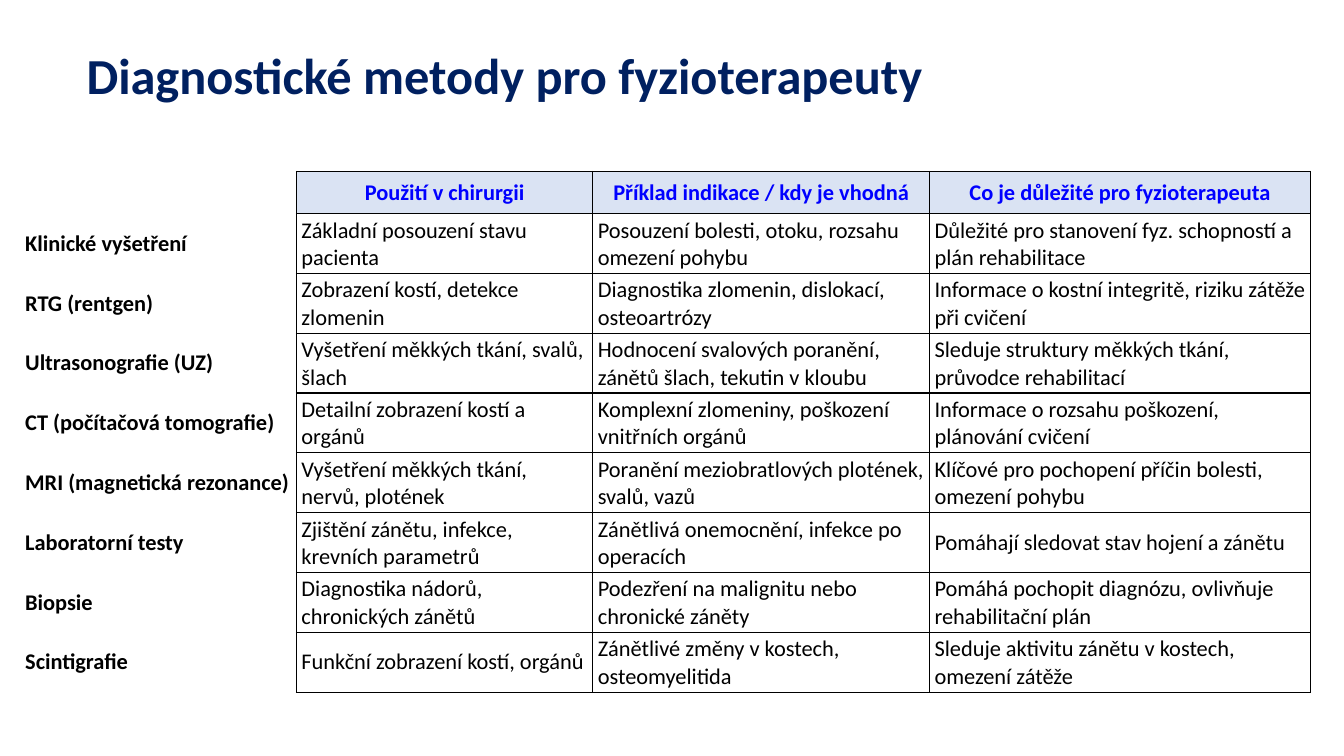
import pptx
import pptx.dml.color
import pptx.enum.text
import pptx.oxml
import pptx.oxml.ns
import pptx.util
from lxml import etree

TITLE = "Diagnostické metody pro fyzioterapeuty"
HEADINGS = ["", "Použití v chirurgii", "Příklad indikace / kdy je vhodná",
            "Co je důležité pro fyzioterapeuta"]
METHODS = [
    ("Klinické vyšetření", "Základní posouzení stavu pacienta",
     "Posouzení bolesti, otoku, rozsahu omezení pohybu",
     "Důležité pro stanovení fyz. schopností a plán rehabilitace"),
    ("RTG (rentgen)", "Zobrazení kostí, detekce zlomenin",
     "Diagnostika zlomenin, dislokací, osteoartrózy",
     "Informace o kostní integritě, riziku zátěže při cvičení"),
    ("Ultrasonografie (UZ)", "Vyšetření měkkých tkání, svalů, šlach",
     "Hodnocení svalových poranění, zánětů šlach, tekutin v kloubu",
     "Sleduje struktury měkkých tkání, průvodce rehabilitací"),
    ("CT (počítačová tomografie)", "Detailní zobrazení kostí a orgánů",
     "Komplexní zlomeniny, poškození vnitřních orgánů",
     "Informace o rozsahu poškození, plánování cvičení"),
    ("MRI (magnetická rezonance)", "Vyšetření měkkých tkání, nervů, plotének",
     "Poranění meziobratlových plotének, svalů, vazů",
     "Klíčové pro pochopení příčin bolesti, omezení pohybu"),
    ("Laboratorní testy", "Zjištění zánětu, infekce, krevních parametrů",
     "Zánětlivá onemocnění, infekce po operacích",
     "Pomáhají sledovat stav hojení a zánětu"),
    ("Biopsie", "Diagnostika nádorů, chronických zánětů",
     "Podezření na malignitu nebo chronické záněty",
     "Pomáhá pochopit diagnózu, ovlivňuje rehabilitační plán"),
    ("Scintigrafie", "Funkční zobrazení kostí, orgánů",
     "Zánětlivé změny v kostech, osteomyelitida",
     "Sleduje aktivitu zánětu v kostech, omezení zátěže"),
]

COLORS = {"title": "002060", "heading": "0000FF", "body": "000000",
          "heading_fill": "DAE3F3", "border": "000000"}
SLIDE_SIZE = (13.33, 7.5)
TITLE_BOX = (0.76, 0.35, 11.68, 0.86)
TABLE_CORNER = (0.2, 1.7)
COLUMN_WIDTHS = [2.74, 2.94, 3.34, 3.78]
HEADING_HEIGHT, METHOD_HEIGHT = 0.42, 0.59
CELL_FORMAT = {
    "margin_left": pptx.util.Inches(0.05), "margin_right": pptx.util.Inches(0.05),
    "margin_top": pptx.util.Inches(0.03), "margin_bottom": pptx.util.Inches(0.03),
    "vertical_anchor": pptx.enum.text.MSO_ANCHOR.MIDDLE,
}


def inches(lengths):
    return [pptx.util.Inches(length) for length in lengths]


def set_attributes(target, values):
    for name, value in values.items():
        setattr(target, name, value)


def write(paragraph, text, color, size, bold):
    run = paragraph.add_run()
    run.text = text
    set_attributes(run.font, {"name": "Calibri", "size": pptx.util.Pt(size), "bold": bold})
    run.font.color.rgb = pptx.dml.color.RGBColor.from_string(COLORS[color])


def set_borders(cell, visible_sides):
    """Draw a 1 pt line on the visible sides and none on the others."""
    properties = cell._tc.get_or_add_tcPr()
    for side in "LRTB":
        line = etree.SubElement(properties, pptx.oxml.ns.qn(f"a:ln{side}"),
                                w=str(pptx.util.Pt(1)))
        if side in visible_sides:
            fill = etree.SubElement(line, pptx.oxml.ns.qn("a:solidFill"))
            etree.SubElement(fill, pptx.oxml.ns.qn("a:srgbClr"), val=COLORS["border"])
        else:
            etree.SubElement(line, pptx.oxml.ns.qn("a:noFill"))


def add_title(slide):
    frame = slide.shapes.add_textbox(*inches(TITLE_BOX)).text_frame
    set_attributes(frame, {"word_wrap": True,
                           "vertical_anchor": pptx.enum.text.MSO_ANCHOR.MIDDLE})
    frame.paragraphs[0].line_spacing = 0.9
    write(frame.paragraphs[0], TITLE, "title", 36, True)


def fill_cell(cell, text, is_heading, is_label):
    set_attributes(cell, CELL_FORMAT)
    set_borders(cell, "R" if is_label else "LRTB")
    if is_heading and not is_label:
        cell.fill.solid()
        cell.fill.fore_color.rgb = pptx.dml.color.RGBColor.from_string(COLORS["heading_fill"])
    else:
        cell.fill.background()
    if text:
        paragraph = cell.text_frame.paragraphs[0]
        align = pptx.enum.text.PP_ALIGN
        paragraph.alignment = align.CENTER if is_heading else align.LEFT
        write(paragraph, text, "heading" if is_heading else "body", 16,
              is_heading or is_label)


def add_methods_table(slide):
    rows = [HEADINGS, *METHODS]
    heights = [HEADING_HEIGHT] + [METHOD_HEIGHT] * len(METHODS)
    table = slide.shapes.add_table(
        len(rows), len(HEADINGS),
        *inches((*TABLE_CORNER, sum(COLUMN_WIDTHS), sum(heights)))).table
    set_attributes(table, {"first_row": False, "horz_banding": False})
    for column, width in zip(table.columns, inches(COLUMN_WIDTHS)):
        column.width = width
    for row, height in zip(table.rows, inches(heights)):
        row.height = height
    for row_index, texts in enumerate(rows):
        for column_index, text in enumerate(texts):
            fill_cell(table.cell(row_index, column_index), text,
                      row_index == 0, column_index == 0)


def main():
    presentation = pptx.Presentation()
    width, height = inches(SLIDE_SIZE)
    set_attributes(presentation, {"slide_width": width, "slide_height": height})
    slide = presentation.slides.add_slide(presentation.slide_layouts[6])
    add_title(slide)
    add_methods_table(slide)
    presentation.save("out.pptx")


if __name__ == "__main__":
    main()
